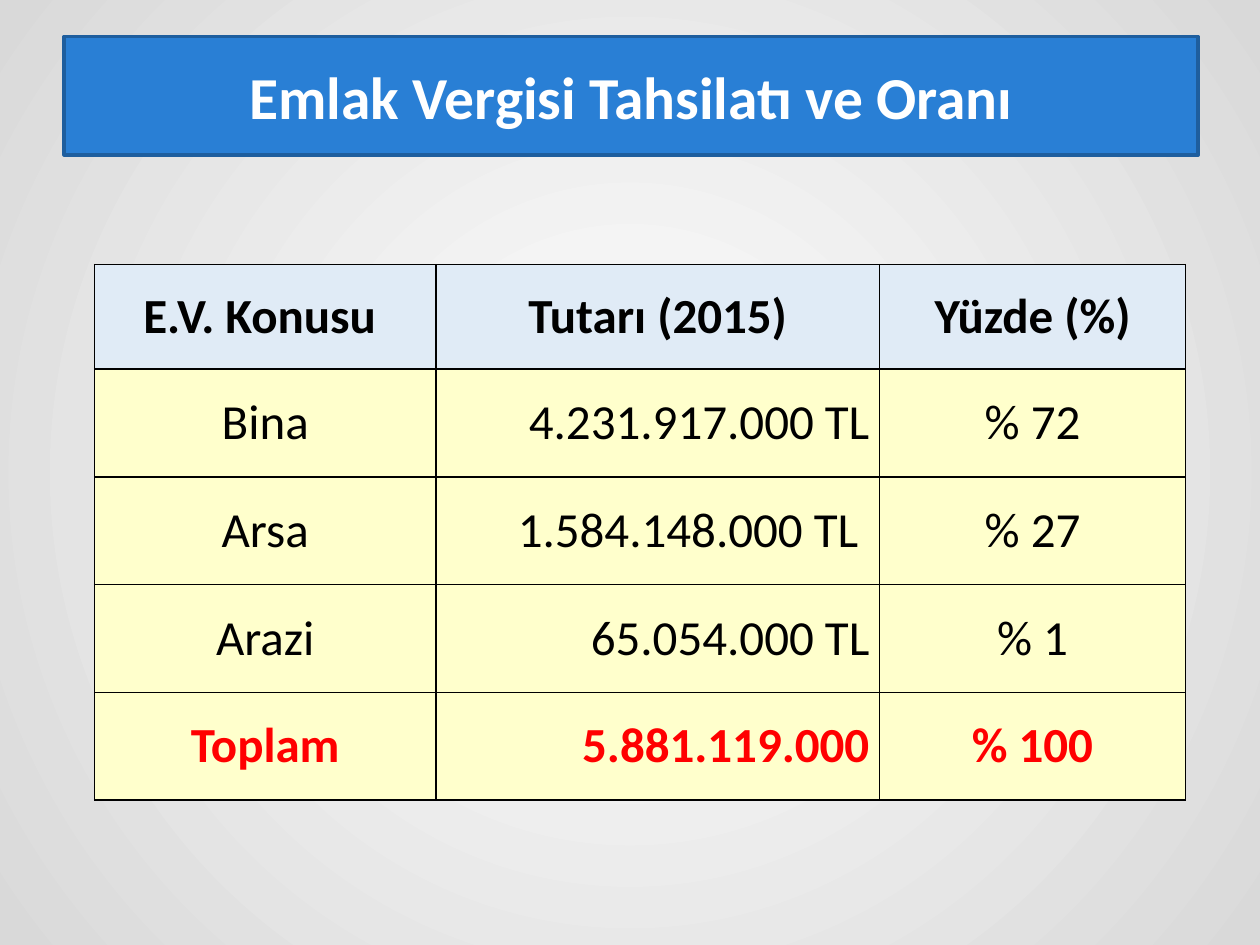
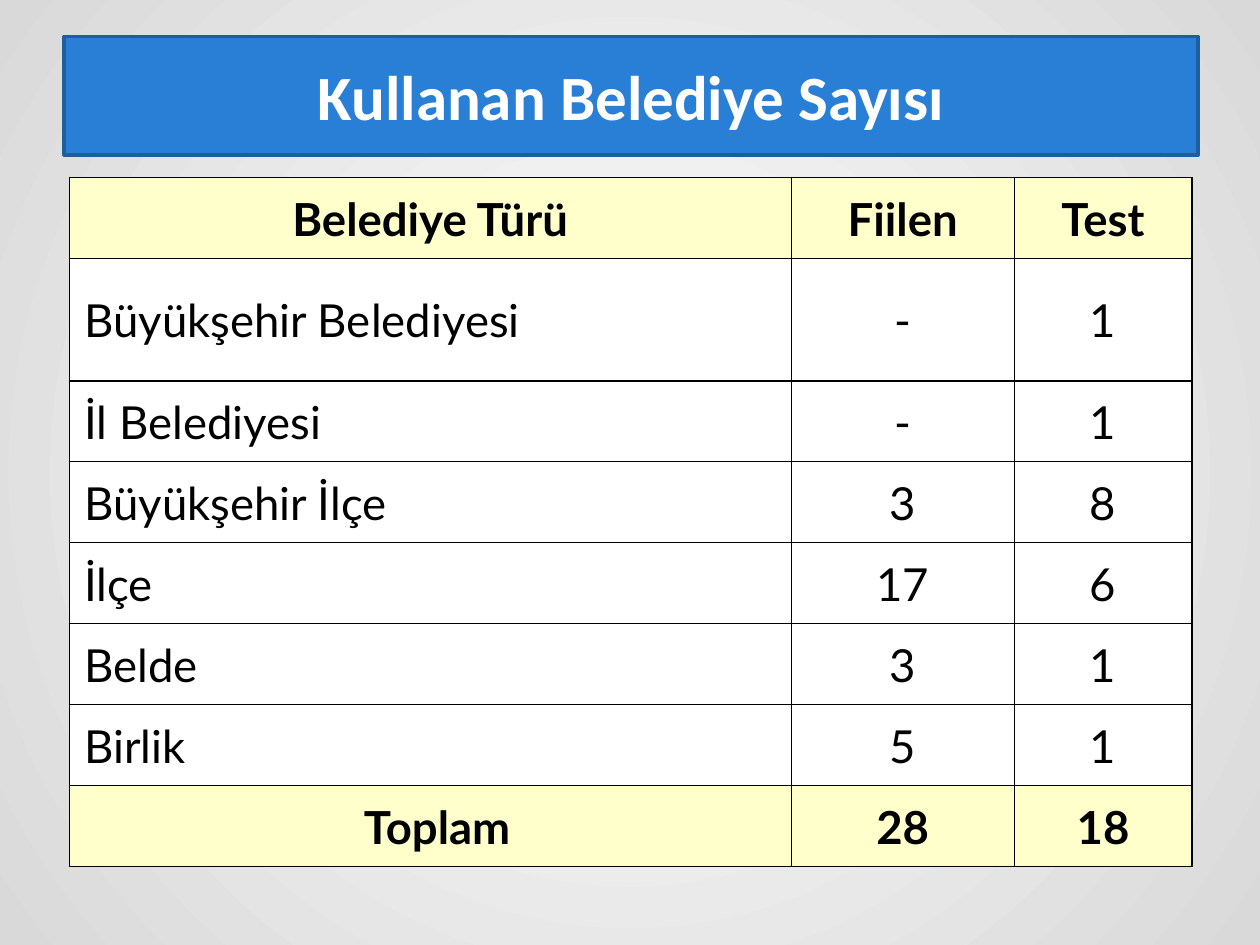
from lxml.etree import SubElement
from pptx import Presentation
from pptx.dml.color import RGBColor
from pptx.enum.text import MSO_ANCHOR, PP_ALIGN
from pptx.oxml.ns import qn
from pptx.util import Inches, Pt

BLACK = RGBColor(0x00, 0x00, 0x00)
WHITE = RGBColor(0xFF, 0xFF, 0xFF)
GREY = RGBColor(0xD9, 0xD9, 0xD9)
RED = RGBColor(0xFF, 0x00, 0x00)
BLUE = RGBColor(0x29, 0x7F, 0xD5)
DARK_BLUE = RGBColor(0x1E, 0x5E, 0x9E)
PALE_BLUE = RGBColor(0xE0, 0xEB, 0xF6)
PALE_YELLOW = RGBColor(0xFF, 0xFF, 0xCC)
LEFT, CENTER, RIGHT = PP_ALIGN.LEFT, PP_ALIGN.CENTER, PP_ALIGN.RIGHT


class Deck:
    def __init__(self):
        self.presentation = Presentation()
        self.presentation.slide_width = Inches(10)
        self.presentation.slide_height = Inches(7.5)
        self.slide = None
        self.paint_background()

    def paint_background(self):
        master = self.presentation.slide_master
        fill = master.background.fill
        fill.gradient()
        for stop, color in zip(fill.gradient_stops, (WHITE, GREY)):
            stop.color.rgb = color
        gradient = master.element.find(".//" + qn("p:bgPr") + "/" + qn("a:gradFill"))
        gradient.remove(gradient.find(qn("a:lin")))
        circle = SubElement(gradient, qn("a:path"), path="circle")
        SubElement(circle, qn("a:fillToRect"), l="50000", t="50000", r="50000", b="50000")

    def add_slide(self, heading, size):
        self.slide = self.presentation.slides.add_slide(self.presentation.slide_layouts[5])
        title = self.slide.shapes.title
        title.left, title.top = Inches(0.51), Inches(0.29)
        title.width, title.height = Inches(9), Inches(0.94)
        title.text_frame.text = heading
        title.text_frame.vertical_anchor = MSO_ANCHOR.MIDDLE
        self.style_text(title.text_frame, "Calibri", size, WHITE, True, CENTER)
        self.style_title_band(title)

    def style_title_band(self, title):
        properties = title.element.spPr
        outline = SubElement(properties, qn("a:prstGeom"), prst="roundRect")
        adjustments = SubElement(outline, qn("a:avLst"))
        SubElement(adjustments, qn("a:gd"), name="adj", fmla="val 10400")
        style = properties.makeelement(qn("p:style"), {})
        properties.addnext(style)
        for reference, index, color in (("a:lnRef", "2", DARK_BLUE), ("a:fillRef", "1", BLUE),
                                        ("a:effectRef", "0", BLUE), ("a:fontRef", "minor", WHITE)):
            part = SubElement(style, qn(reference), idx=index)
            SubElement(part, qn("a:srgbClr"), val=str(color))

    def style_text(self, frame, font_name, size, color, bold, alignment):
        paragraph = frame.paragraphs[0]
        paragraph.alignment = alignment
        for run in paragraph.runs:
            run.font.name = font_name
            run.font.size = Pt(size)
            run.font.color.rgb = color
            run.font.bold = bold

    def add_borders(self, cell):
        properties = cell._tc.get_or_add_tcPr()
        for position, side in enumerate(("a:lnL", "a:lnR", "a:lnT", "a:lnB")):
            border = properties.makeelement(qn(side), {"w": str(Pt(1))})
            properties.insert(position, border)
            solid = SubElement(border, qn("a:solidFill"))
            SubElement(solid, qn("a:srgbClr"), val=str(BLACK))

    def add_table(self, left, top, widths, heights, rows, style_cell, font_name, size):
        table = self.slide.shapes.add_table(
            len(rows), len(widths), Inches(left), Inches(top),
            Inches(sum(widths)), Inches(sum(heights))).table
        for column, width in zip(table.columns, widths):
            column.width = Inches(width)
        for row, height in zip(table.rows, heights):
            row.height = Inches(height)
        for r, values in enumerate(rows):
            for c, value in enumerate(values):
                cell = table.cell(r, c)
                fill, color, bold, alignment, margins = style_cell(r, c)
                cell.text_frame.text = value
                cell.vertical_anchor = MSO_ANCHOR.MIDDLE
                (cell.margin_left, cell.margin_top,
                 cell.margin_right, cell.margin_bottom) = map(Inches, margins)
                self.style_text(cell.text_frame, font_name, size, color, bold, alignment)
                cell.fill.solid()
                cell.fill.fore_color.rgb = fill
                self.add_borders(cell)


TAX_ROWS = [
    ("E.V. Konusu ", "Tutarı (2015)", "Yüzde (%)"),
    ("Bina", "4.231.917.000 TL", "% 72"),
    ("Arsa", "1.584.148.000 TL ", "% 27"),
    ("Arazi", "65.054.000 TL", "% 1"),
    ("Toplam", "5.881.119.000", "% 100"),
]
MUNICIPALITY_ROWS = [
    ("Belediye Türü", "Fiilen", "Test"),
    ("Büyükşehir Belediyesi", "-", "1"),
    ("İl Belediyesi", "-", "1"),
    ("Büyükşehir İlçe", "3", "8"),
    ("İlçe", "17", "6"),
    ("Belde", "3", "1"),
    ("Birlik", "5", "1"),
    ("Toplam", "28", "18"),
]


def style_tax(row, column):
    header, total = row == 0, row == len(TAX_ROWS) - 1
    return (PALE_BLUE if header else PALE_YELLOW,
            RED if total else BLACK,
            header or total,
            RIGHT if column == 1 and not header else CENTER,
            (0.08, 0, 0.08, 0))


def style_municipality(row, column):
    header, total = row == 0, row == len(MUNICIPALITY_ROWS) - 1
    emphasized = header or total
    return (PALE_YELLOW if emphasized else WHITE,
            BLACK,
            emphasized,
            LEFT if column == 0 and not emphasized else CENTER,
            (0.12 if column == 0 and not header else 0.01, 0.01, 0.01, 0))


def main():
    deck = Deck()
    deck.add_slide("Emlak Vergisi Tahsilatı ve Oranı", 34)
    tax_header = 0.83
    tax_row = (4.25 - tax_header) / 4
    deck.add_table(0.75, 2.1, (2.71, 3.52, 2.43), [tax_header] + [tax_row] * 4,
                   TAX_ROWS, style_tax, "Calibri", 28)
    deck.add_slide("Kullanan Belediye Sayısı", 36)
    metropolitan_row = 0.97
    municipality_row = (5.47 - metropolitan_row) / 7
    deck.add_table(0.55, 1.41, (5.73, 1.77, 1.41),
                   [municipality_row, metropolitan_row] + [municipality_row] * 6,
                   MUNICIPALITY_ROWS, style_municipality, "Lato", 26)
    deck.presentation.save("out.pptx")


if __name__ == "__main__":
    main()
